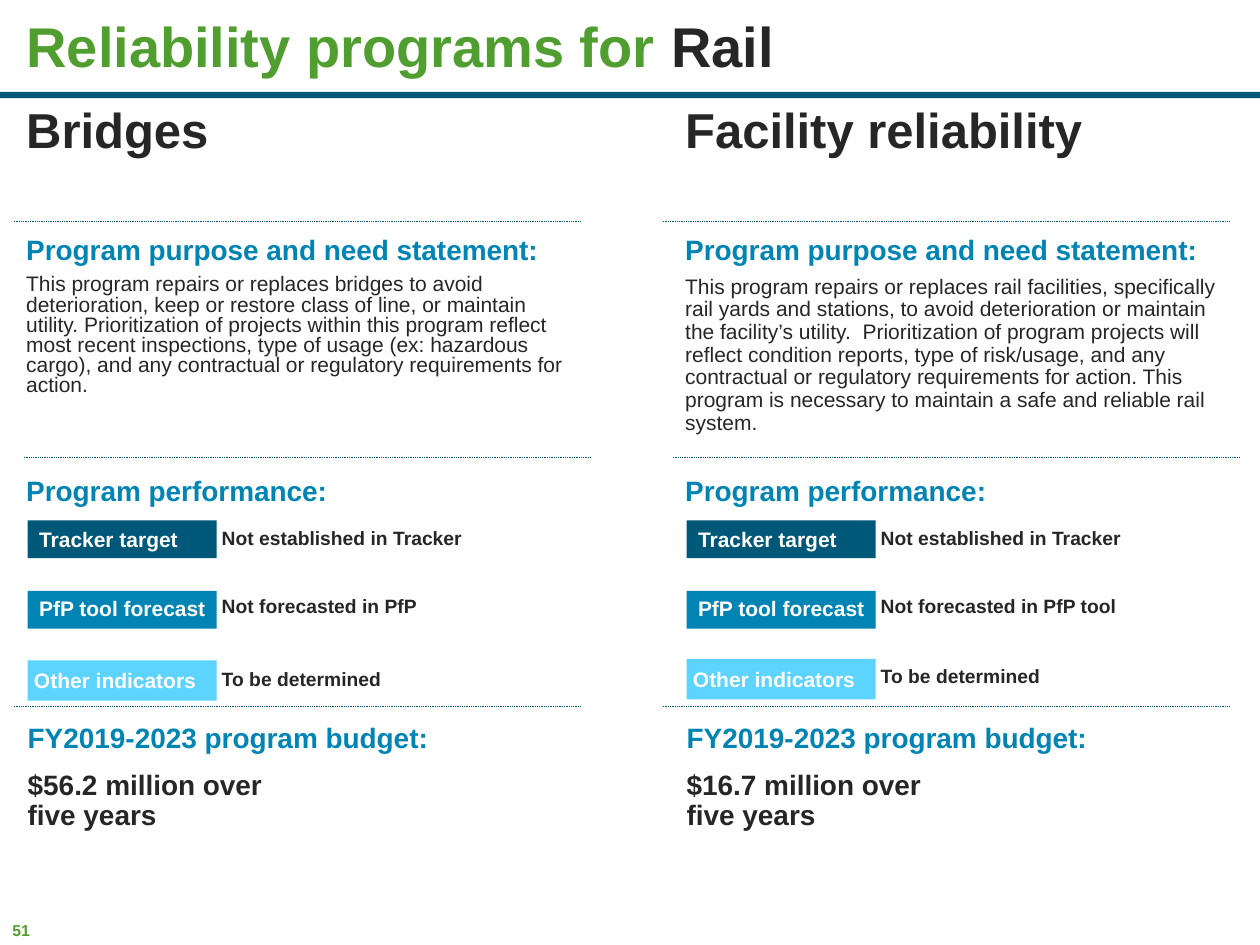
from copy import deepcopy
from pptx import Presentation
from pptx.dml.color import RGBColor
from pptx.enum import dml, shapes, text
from pptx.oxml import ns
from pptx.oxml.xmlchemy import OxmlElement
from pptx.util import Inches, Pt

GREEN = RGBColor(0x50, 0x9E, 0x2F)
INK = RGBColor(0x26, 0x26, 0x26)
NAVY = RGBColor(0x00, 0x58, 0x78)
BLUE = RGBColor(0x00, 0x84, 0xB4)
SKY = RGBColor(0x5D, 0xD3, 0xFF)
WHITE = RGBColor(0xFF, 0xFF, 0xFF)

TOP = text.MSO_ANCHOR.TOP
MID = text.MSO_ANCHOR.MIDDLE
WIDE = (0.1, 0.05, 0.1, 0.05)
FLUSH = (0, 0.05, 0.1, 0.05)
TAG = (0.09, 0.05, 0.09, 0.05)
NOTE = (0.07, 0.07, 0.09, 0.1)
STEP = 5.23

COLS = [
    {
        "name": "Bridges",
        "need": "This program repairs or replaces bridges to avoid deterioration, keep or "
                "restore class of line, or maintain utility. Prioritization of projects "
                "within this program reflect most recent inspections, type of usage (ex: "
                "hazardous cargo), and any contractual or regulatory requirements for action.",
        "tall": 1.11, "gap": 0.8,
        "cast": "Not forecasted in PfP",
        "sum": "$56.2 million over \vfive years",
        "tag": 5.24, "note": 5.24,
    },
    {
        "name": "Facility reliability",
        "need": "This program repairs or replaces rail facilities, specifically rail yards "
                "and stations, to avoid deterioration or maintain the facility’s utility.  "
                "Prioritization of program projects will reflect condition reports, type of "
                "risk/usage, and any contractual or regulatory requirements for action. This "
                "program is necessary to maintain a safe and reliable rail system.",
        "tall": 1.41, "gap": 0.9,
        "cast": "Not forecasted in PfP tool",
        "sum": "$16.7 million over \vfive years",
        "tag": 5.23, "note": 5.22,
    },
]


def style(run, size, color, bold=True):
    look = {"name": "Arial", "size": Pt(size), "bold": bold}
    for key, val in look.items():
        setattr(run.font, key, val)
    run.font.color.rgb = color


def write(shape, words, size, color, bold=True, pad=WIDE, gap=0.9, anchor=TOP, wrap=True):
    frame = shape.text_frame
    sides = ("margin_left", "margin_top", "margin_right", "margin_bottom")
    look = dict(zip(sides, map(Inches, pad)))
    look.update(word_wrap=wrap, vertical_anchor=anchor, auto_size=text.MSO_AUTO_SIZE.NONE)
    for key, val in look.items():
        setattr(frame, key, val)
    para = frame.paragraphs[0]
    para.text = words
    form = {"alignment": text.PP_ALIGN.LEFT, "line_spacing": gap, "space_before": Pt(0)}
    for key, val in form.items():
        setattr(para, key, val)
    for run in para.runs:
        style(run, size, color, bold)
    for brk in para._p.findall(ns.qn("a:br")):
        brk.append(deepcopy(para.runs[0]._r.rPr))
    return para


def label(tree, box, words, size, color, **form):
    return write(tree.add_textbox(*map(Inches, box)), words, size, color, **form)


def block(tree, box, fill):
    rect = tree.add_shape(shapes.MSO_SHAPE.RECTANGLE, *map(Inches, box))
    rect.shadow.inherit = False
    rect.fill.solid()
    rect.fill.fore_color.rgb = fill
    rect.line.fill.background()
    return rect


def rule(tree, left, top):
    line = tree.add_connector(shapes.MSO_CONNECTOR.STRAIGHT,
                              *map(Inches, (left, top, left + 4.5, top)))
    line.line.color.rgb = NAVY
    line.line.width = Pt(0.5)
    line.line.dash_style = dml.MSO_LINE.ROUND_DOT
    line._element.spPr.append(OxmlElement("a:effectLst"))


def badge(tree, left, top, fill, box, words):
    group = tree.add_group_shape().shapes
    block(group, (left, top, 1.5, 0.3), fill)
    label(group, box, words, 12, WHITE, pad=TAG, anchor=MID)


def column(tree, col, shift):
    left, inner, side = 0.11 + shift, 0.22 + shift, 1.69 + shift
    label(tree, (left, 0.79, 4.5, 0.96), col["name"], 28, INK)
    label(tree, (left, 2.14, 4.5, col["tall"]), col["need"], 12, INK,
          bold=False, gap=col["gap"])
    heads = ((1.83, "Program purpose and need statement:"), (3.74, "Program performance:"))
    for top, words in heads:
        label(tree, (left, top, 4.5, 0.25), words, 16, BLUE)

    badge(tree, inner, 4.13, NAVY, (inner, 4.1, 1.65, 0.38), "Tracker target")
    badge(tree, inner, 4.69, BLUE, (inner, 4.65, 2.06, 0.38), "PfP tool forecast")
    tag = block(tree, (inner, col["tag"], 1.5, 0.32), SKY)
    write(tag, "Other indicators", 12, WHITE, pad=(0.05, 0.05, 0.1, 0.05), gap=1.0, anchor=MID)

    notes = (
        (4.13, 0.6, "Not established in Tracker", 0.9, TOP),
        (4.65, 0.7, col["cast"], 1.0, TOP),
        (col["note"], 0.34, "To be determined", 0.9, MID),
    )
    for top, tall, words, gap, anchor in notes:
        label(tree, (side, top, 3, tall), words, 11, INK, pad=NOTE, gap=gap, anchor=anchor)

    label(tree, (inner, 5.7, 4.48, 0.38), "FY2019-2023 program budget:", 16, BLUE, pad=FLUSH)
    label(tree, (inner, 6.07, 4.5, 0.37), col["sum"], 16, INK, pad=(0, 0.05, 0, 0.05))


def header(slide):
    title = slide.shapes.title
    box = {"left": 0.11, "top": 0.08, "width": 9.81, "height": 0.63}
    for key, val in box.items():
        setattr(title, key, Inches(val))
    para = write(title, "Reliability programs for ", 32, GREEN, anchor=MID)
    run = para.add_run()
    run.text = "Rail"
    style(run, 32, INK)


def main():
    deck = Presentation()
    deck.slide_width, deck.slide_height = Inches(10), Inches(7.5)
    slide = deck.slides.add_slide(deck.slide_layouts[5])
    tree = slide.shapes
    block(tree, (0, 0.73, 10, 0.05), NAVY)
    label(tree, (0, 7.26, 0.36, 0.25), "51", 9, GREEN, gap=1.0, wrap=False)
    header(slide)
    for num, col in enumerate(COLS):
        column(tree, col, num * STEP)
        for left, top in ((0.11, 1.76), (0.19, 3.63), (0.11, 5.61)):
            rule(tree, left + num * 5.15, top)
    deck.save("out.pptx")


if __name__ == "__main__":
    main()
